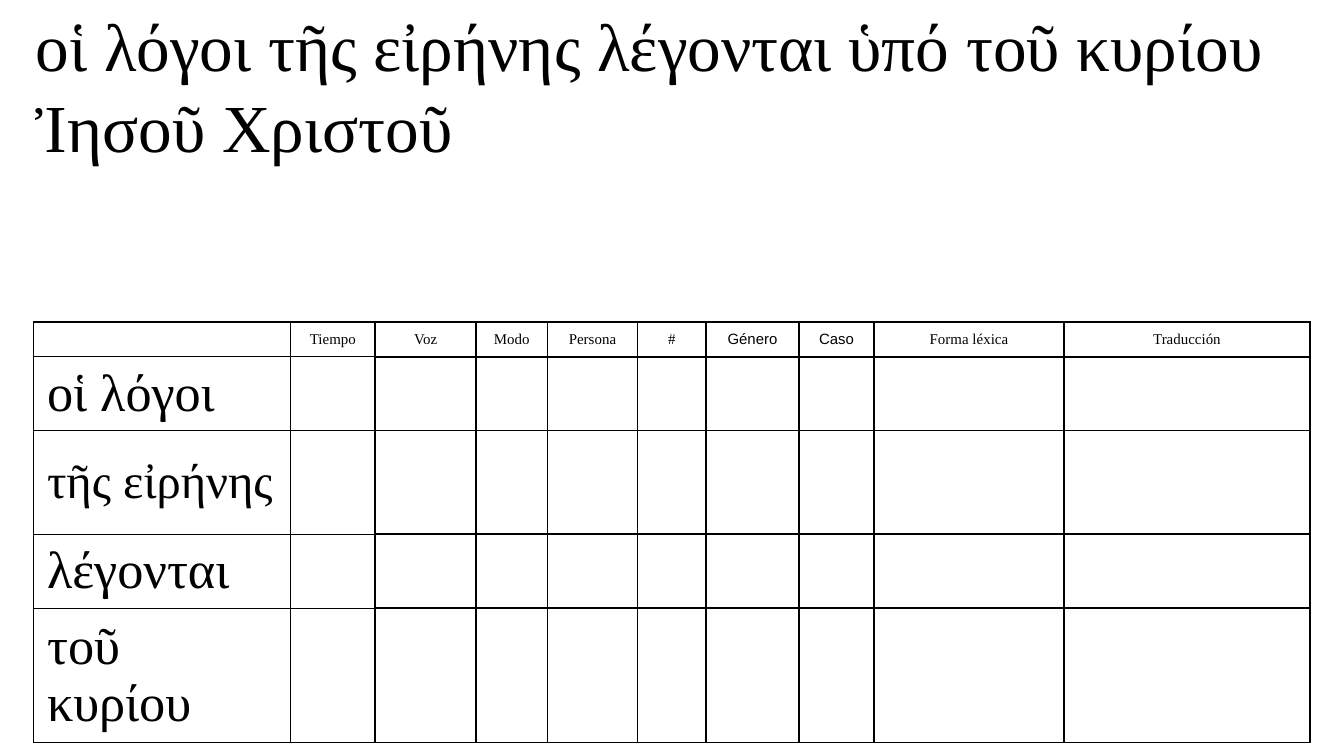
from dataclasses import dataclass

from lxml.etree import SubElement
from pptx import Presentation
from pptx.dml.color import RGBColor
from pptx.enum.text import MSO_ANCHOR, MSO_AUTO_SIZE, PP_ALIGN
from pptx.oxml.ns import qn
from pptx.util import Inches, Pt


@dataclass(frozen=True)
class Theme:
    ink: RGBColor = RGBColor(0, 0, 0)
    serif: str = "Times New Roman"
    sans: str = "Arial"
    title: int = 36
    header: int = 8
    word: int = 28
    long_word: int = 26
    line: float = 1
    thin: float = 0.75


THEME = Theme()
SANS_HEADERS = ("Género", "Caso")
COLUMNS = [
    ("", 1.91), ("Tiempo", 0.63), ("Voz", 0.75), ("Modo", 0.53),
    ("Persona", 0.67), ("#", 0.51), ("Género", 0.69), ("Caso", 0.56),
    ("Forma léxica", 1.41), ("Traducción", 1.83),
]
HEADER_HEIGHT = 0.26
WORDS = [
    ("οἱ λόγοι", 0.43, THEME.word, 0.06),
    ("τῆς εἰρήνης", 0.77, THEME.long_word, 0.04),
    ("λέγονται", 0.43, THEME.word, 0.06),
    ("τοῦ κυρίου", 0.43, THEME.word, 0.07),
]


def style(p, size, face=THEME.serif):
    p.font.size = Pt(size)
    p.font.name = face
    p.font.color.rgb = THEME.ink


def set_borders(cell, **widths):
    tcPr = cell._tc.get_or_add_tcPr()
    for i, side in enumerate(("L", "R", "T", "B")):
        ln = tcPr.makeelement(qn(f"a:ln{side}"), {"w": str(Pt(widths[side]))})
        fill = SubElement(ln, qn("a:solidFill"))
        SubElement(fill, qn("a:srgbClr"), val=str(THEME.ink))
        tcPr.insert(i, ln)


def fill_cell(cell, text, size, face=THEME.serif, align=PP_ALIGN.LEFT, pad=0.04):
    cell.fill.background()
    cell.vertical_anchor = MSO_ANCHOR.MIDDLE
    cell.margin_left = cell.margin_right = Inches(0.1)
    cell.margin_top = cell.margin_bottom = Inches(pad)
    p = cell.text_frame.paragraphs[0]
    p.alignment = align
    if text:
        p.text = text
        style(p, size, face)
    else:
        SubElement(p._p, qn("a:endParaRPr"), sz=str(size * 100))


def add_title(s, box, text):
    sp = s.shapes.title
    sp.left, sp.top, sp.width, sp.height = box
    tf = sp.text_frame
    tf.word_wrap = True
    tf.auto_size = MSO_AUTO_SIZE.NONE
    tf.vertical_anchor = MSO_ANCHOR.MIDDLE
    p = tf.paragraphs[0]
    p.text = text
    p.alignment = PP_ALIGN.LEFT
    style(p, THEME.title)


def add_parsing_table(s, box):
    width = box[2]
    frame = s.shapes.add_table(len(WORDS) + 1, len(COLUMNS), *box)
    table = frame.table
    table.first_row = table.horz_banding = False
    total = sum(share for _, share in COLUMNS)
    for col, (_, share) in zip(table.columns, COLUMNS):
        col.width = int(width * share / total)
    heights = [HEADER_HEIGHT] + [word[1] for word in WORDS]
    for row, row_height in zip(table.rows, heights):
        row.height = Inches(row_height)
    frame.height = box[3]

    for c, (label, _) in enumerate(COLUMNS):
        face = THEME.sans if label in SANS_HEADERS else THEME.serif
        fill_cell(table.cell(0, c), label, THEME.header, face, PP_ALIGN.CENTER)
        for r, (word, _, size, pad) in enumerate(WORDS, 1):
            text, points = (word, size) if c == 0 else ("", THEME.header)
            fill_cell(table.cell(r, c), text, points, pad=pad)
        for r in range(len(heights)):
            rule = THEME.thin if c < 2 else THEME.line
            set_borders(table.cell(r, c), L=THEME.line, R=THEME.line,
                        T=rule if r else THEME.line, B=rule)


def main():
    prs = Presentation()
    prs.slide_width = Inches(10)
    prs.slide_height = prs.slide_width * 9 // 16
    w, h = prs.slide_width, prs.slide_height

    def share(*parts):
        return [int(side * part / 100) for side, part in zip((w, h, w, h), parts)]

    s = prs.slides.add_slide(prs.slide_layouts[5])
    add_title(s, share(1.65, -0.36, 96.7, 23.3),
              "οἱ λόγοι τῆς εἰρήνης λέγονται ὑπό τοῦ κυρίου Ἰησοῦ Χριστοῦ")
    add_parsing_table(s, share(2.5, 42.57, 95, 47.29))
    prs.save("out.pptx")


if __name__ == "__main__":
    main()
